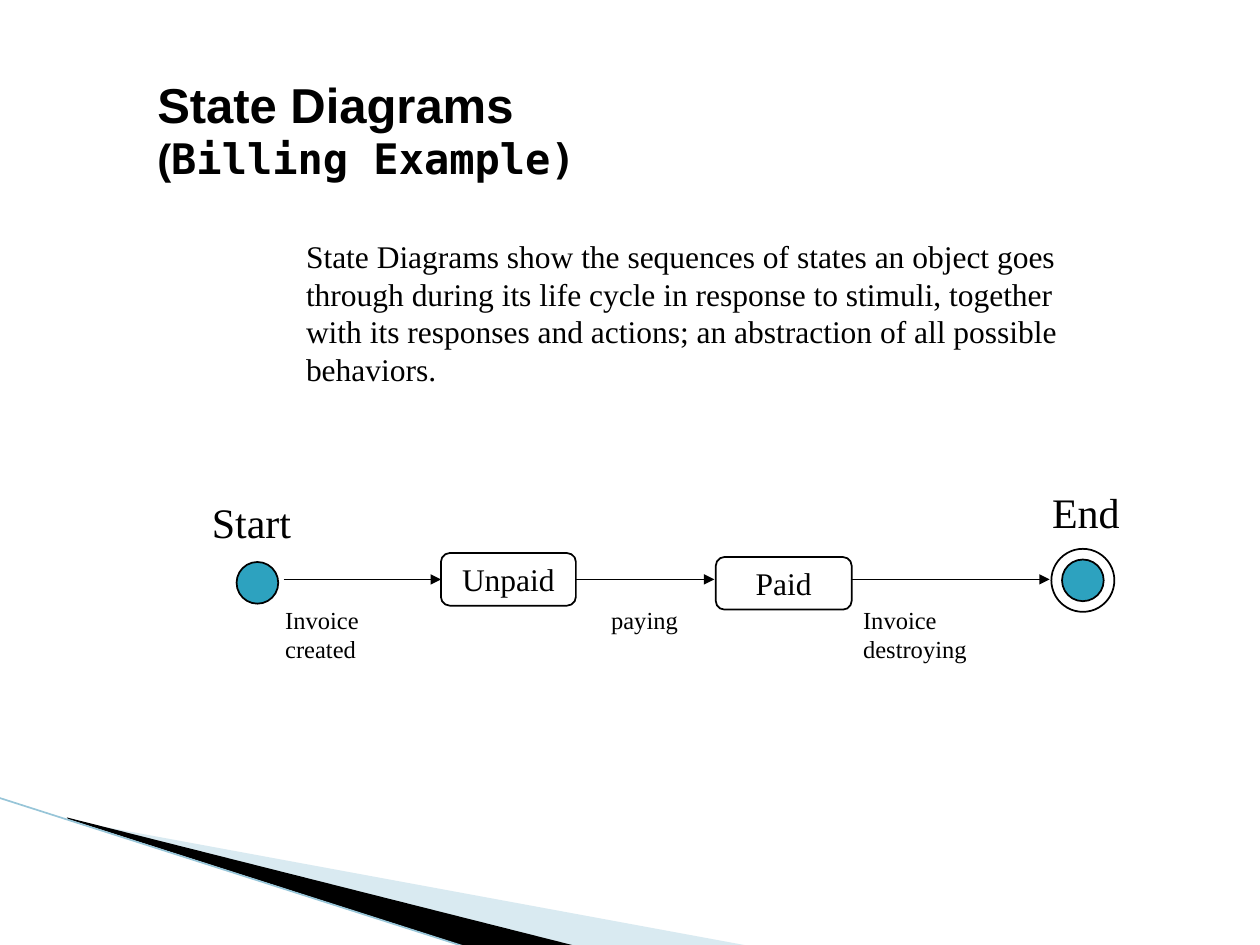
import pptx
import pptx.util
import pptx.dml.color
import pptx.enum.shapes
import pptx.enum.text
import pptx.oxml
import pptx.oxml.ns

Cm, Pt = pptx.util.Cm, pptx.util.Pt
Kind = pptx.enum.shapes.MSO_SHAPE
Align = pptx.enum.text.PP_ALIGN
Anchor = pptx.enum.text.MSO_ANCHOR
SERIF, SANS, MONO = "Times New Roman", "Arial", "DejaVu Sans Mono"
INK, TEAL = "000000", "2DA2BF"
AXIS = 11.68

TITLE = [[("State Diagrams", 28, SANS)],
         [("(", 24, SANS), ("Billing Example)", 24, MONO)]]
BODY = ("State Diagrams show the sequences of states an object goes through "
        "during its life cycle in response to stimuli, together with its "
        "responses and actions; an abstraction of all possible behaviors.")
TEXTS = [
    (BODY, 5.92, 4.65, 16.51, 3.3, 18, True),
    ("Start", 4.02, 9.88, 2.75, 1.27, 24, True),
    ("End", 20.96, 9.68, 1.9, 1.27, 24, True),
    ("Invoice  created", 5.5, 12.07, 3.66, 0.85, 14, False),
    ("paying", 12.07, 12.07, 1.85, 0.85, 14, True),
    ("Invoice destroying", 17.15, 12.07, 4.19, 0.85, 14, False),
]
STATES = [("Unpaid", 8.89, 11.15, 2.72), ("Paid", 14.43, 11.23, 2.74)]
DOTS = [(5.19, 11.75, 0.84, TEAL), (21.83, 11.7, 0.84, TEAL),
        (21.83, 11.7, 1.27, None)]
ARROWS = [(5.72, 8.89, None, "Unpaid"), (11.61, 14.4, "Unpaid", None),
          (17.15, 21.16, None, None)]
WEDGES = [
    ([(1.4, 16.54), (15.11, 19.07), (11.58, 19.07), (1.4, 16.51)],
     "A0CBDC", 40),
    ([(1.35, 16.48), (11.61, 19.07), (9.45, 19.1), (1.37, 16.51)],
     INK, 100),
]


def rgb(code):
    return pptx.dml.color.RGBColor.from_string(code)


def style(run, size, face=SERIF, bold=False):
    run.font.size, run.font.name, run.font.bold = Pt(size), face, bold
    run.font.color.rgb = rgb(INK)


def paint(shape, fill, line=INK):
    shape.shadow.inherit = False
    if fill:
        shape.fill.solid()
        shape.fill.fore_color.rgb = rgb(fill)
    else:
        shape.fill.background()
    if line:
        shape.line.color.rgb = rgb(line)
        shape.line.width = Pt(1)
    else:
        shape.line.fill.background()


def add(parent, tag, **attrs):
    node = pptx.oxml.parse_xml(
        f'<a:{tag} {pptx.oxml.ns.nsdecls("a")}/>')
    for key, val in attrs.items():
        node.set(key, val)
    parent.append(node)


def rule(x1, y1, x2, y2, color, width, head=False):
    line = slide.shapes.add_connector(
        pptx.enum.shapes.MSO_CONNECTOR.STRAIGHT,
        Cm(x1), Cm(y1), Cm(x2), Cm(y2))
    line.line.color.rgb = rgb(color)
    line.line.width = Pt(width)
    if head:
        add(line.line._get_or_add_ln(), "tailEnd", type="triangle")
    add(line._element.spPr, "effectLst")
    return line


deck = pptx.Presentation()
deck.slide_width, deck.slide_height = Cm(25.4), Cm(19.05)
slide = deck.slides.add_slide(deck.slide_layouts[5])

for points, color, alpha in WEDGES:
    spots = [(Cm(x), Cm(y)) for x, y in points]
    pen = slide.shapes.build_freeform(*spots[0])
    pen.add_line_segments(spots[1:], close=True)
    wedge = pen.convert_to_shape()
    paint(wedge, color, None)
    if alpha < 100:
        tint = wedge._element.spPr.find(".//" + pptx.oxml.ns.qn("a:srgbClr"))
        add(tint, "alpha", val=str(alpha * 1000))
rule(-0.03, 16.08, 9.42, 19.1, "97C5D8", 0.95)

title = slide.shapes.title
title.left, title.top = Cm(1.27), Cm(1.07)
title.width, title.height = Cm(19.86), Cm(3.05)
frame = title.text_frame
frame.margin_left = Cm(1.9)
frame.vertical_anchor = Anchor.MIDDLE
para = frame.paragraphs[0]
para.alignment = Align.LEFT
for row, parts in enumerate(TITLE):
    if row:
        para.add_line_break()
    for text, size, face in parts:
        run = para.add_run()
        run.text = text
        style(run, size, face, True)

boxes = {}
for name, x, y, wide in STATES:
    box = slide.shapes.add_shape(Kind.FLOWCHART_ALTERNATE_PROCESS,
                                 Cm(x), Cm(y), Cm(wide), Cm(1.06))
    paint(box, None)
    frame = box.text_frame
    frame.text = name
    frame.word_wrap = False
    frame.vertical_anchor = Anchor.MIDDLE
    frame.paragraphs[0].alignment = Align.CENTER
    style(frame.paragraphs[0].runs[0], 18)
    boxes[name] = box

for x, y, size, fill in DOTS:
    dot = slide.shapes.add_shape(Kind.OVAL, Cm(x - size / 2),
                                 Cm(y - size / 2), Cm(size), Cm(size))
    paint(dot, fill)

for x1, x2, source, target in ARROWS:
    arrow = rule(x1, AXIS, x2, AXIS, INK, 0.75, True)
    if source:
        arrow.begin_connect(boxes[source], 3)
    if target:
        arrow.end_connect(boxes[target], 1)

for text, x, y, wide, high, size, wrap in TEXTS:
    frame = slide.shapes.add_textbox(
        Cm(x), Cm(y), Cm(wide), Cm(high)).text_frame
    frame.text = text
    frame.word_wrap = wrap
    style(frame.paragraphs[0].runs[0], size)

deck.save("out.pptx")
